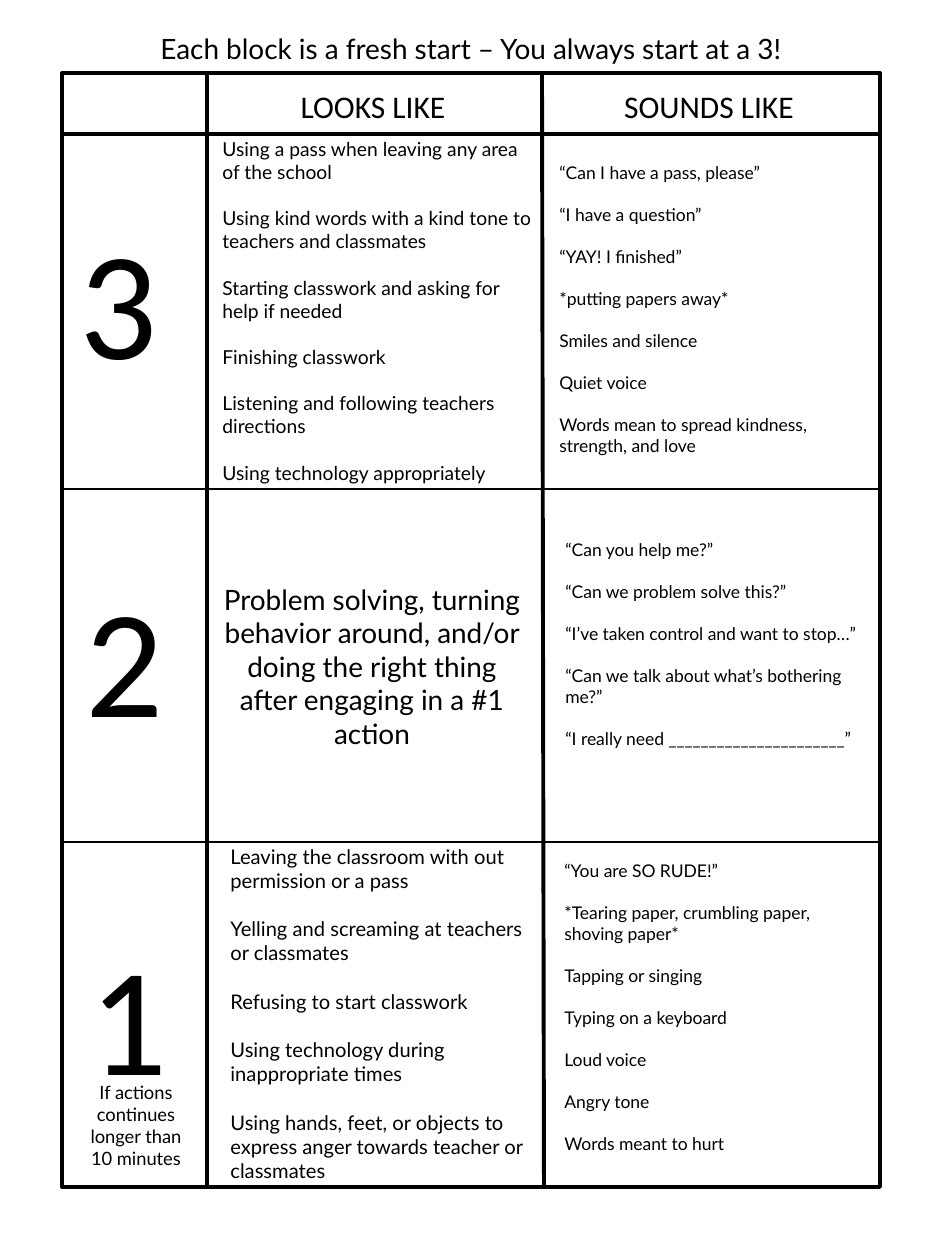
"""Behaviour chart: what levels 3, 2 and 1 look and sound like."""
from pptx import Presentation, util as u
from pptx.dml.color import RGBColor
from pptx.enum import shapes, text
from pptx.oxml.ns import qn
from lxml import etree

EMU_PER_PX = 914400 / 126
COLOURS = {"ink": "000000", "paper": "FFFFFF"}
INK = RGBColor.from_string(COLOURS["ink"])
PAPER = RGBColor.from_string(COLOURS["paper"])
LEFT, CENTRE = text.PP_ALIGN.LEFT, text.PP_ALIGN.CENTER


def px(*lengths):
    return [u.Emu(round(n * EMU_PER_PX)) for n in lengths]


def write(frame, lines, size, font="Lato", align=LEFT):
    frame.word_wrap = True
    frame.vertical_anchor = text.MSO_ANCHOR.TOP
    for i, line in enumerate(lines):
        paragraph = frame.add_paragraph() if i else frame.paragraphs[0]
        paragraph.alignment = align
        paragraph.space_before = u.Pt(round(size * 1.2, 1) if i else 0)
        run = paragraph.add_run()
        run.text = line
        run.font.name = font
        run.font.size = u.Pt(size)
        run.font.color.rgb = INK


deck = Presentation()
deck.slide_width, deck.slide_height = px(945, 1260)
slide = deck.slides.add_slide(deck.slide_layouts[5])

heading = slide.shapes.title
heading.left, heading.top, heading.width, heading.height = px(62, 25, 818, 47)
heading.text_frame.auto_size = text.MSO_AUTO_SIZE.NONE
write(heading.text_frame, ["Each block is a fresh start – You always start at a 3!"], 16, align=CENTRE)

for top, height in [(73, 61), (134, 1053)]:
    panel = slide.shapes.add_shape(shapes.MSO_SHAPE.RECTANGLE, *px(62, top, 818, height))
    panel.shadow.inherit = False
    panel.fill.solid()
    panel.fill.fore_color.rgb = PAPER
    panel.line.color.rgb = INK
    panel.line.width = u.Pt(2.25)

dividers = [
    (207, 73, 207, 1187, 2.25),
    (542, 73, 544, 1187, 2.25),
    (62, 489, 878, 489, 1.5),
    (64, 842, 881, 842, 1.5),
]
for *ends, weight in dividers:
    divider = slide.shapes.add_connector(shapes.MSO_CONNECTOR.STRAIGHT, *px(*ends))
    divider.line.color.rgb = INK
    divider.line.width = u.Pt(weight)
    etree.SubElement(divider.line._get_or_add_ln().getparent(), qn("a:effectLst"))

looks_like_3 = [
    "Using a pass when leaving any area of the school",
    "Using kind words with a kind tone to teachers and classmates",
    "Starting classwork and asking for help if needed",
    "Finishing classwork",
    "Listening and following teachers directions",
    "Using technology appropriately",
]
sounds_like_3 = [
    "“Can I have a pass, please”",
    "“I have a question”",
    "“YAY! I finished”",
    "*putting papers away*",
    "Smiles and silence",
    "Quiet voice",
    "Words mean to spread kindness, strength, and love",
]
looks_like_2 = [
    "Problem solving, turning behavior around, and/or doing the right thing "
    "after engaging in a #1 action",
]
sounds_like_2 = [
    "“Can you help me?”",
    "“Can we problem solve this?”",
    "“I’ve taken control and want to stop…”",
    "“Can we talk about what’s bothering me?”",
    "“I really need ______________________”",
]
looks_like_1 = [
    "Leaving the classroom with out permission or a pass",
    "Yelling and screaming at teachers or classmates",
    "Refusing to start classwork",
    "Using technology during inappropriate times",
    "Using hands, feet, or objects to express anger towards teacher or classmates",
]
sounds_like_1 = [
    "“You are SO RUDE!”",
    "*Tearing paper, crumbling paper, shoving paper*",
    "Tapping or singing",
    "Typing on a keyboard",
    "Loud voice",
    "Angry tone",
    "Words meant to hurt",
]
warning = ["If actions continues longer than 10 minutes"]

entries = [
    ((249, 81, 248, 50), ["LOOKS LIKE"], 18, "Calibri", CENTRE),
    ((585, 81, 248, 50), ["SOUNDS LIKE"], 18, "Calibri", CENTRE),
    ((67, 199, 102, 199), ["3"], 88, "Calibri", LEFT),
    ((210, 131, 334, 363), looks_like_3, 11, "Lato", LEFT),
    ((547, 156, 318, 310), sounds_like_3, 10, "Lato", LEFT),
    ((73, 557, 102, 199), ["2"], 88, "Calibri", LEFT),
    ((205, 576, 334, 183), looks_like_2, 16, "Lato", CENTRE),
    ((553, 533, 318, 267), sounds_like_2, 10, "Lato", LEFT),
    ((77, 915, 102, 199), ["1"], 88, "Calibri", LEFT),
    ((73, 1075, 126, 102), warning, 10.5, "Lato", CENTRE),
    ((218, 838, 334, 354), looks_like_1, 11.5, "Lato", LEFT),
    ((552, 854, 318, 310), sounds_like_1, 10, "Lato", LEFT),
]
for place, lines, size, font, align in entries:
    entry = slide.shapes.add_textbox(*px(*place))
    entry.text_frame.auto_size = text.MSO_AUTO_SIZE.SHAPE_TO_FIT_TEXT
    write(entry.text_frame, lines, size, font, align)

deck.save("out.pptx")
